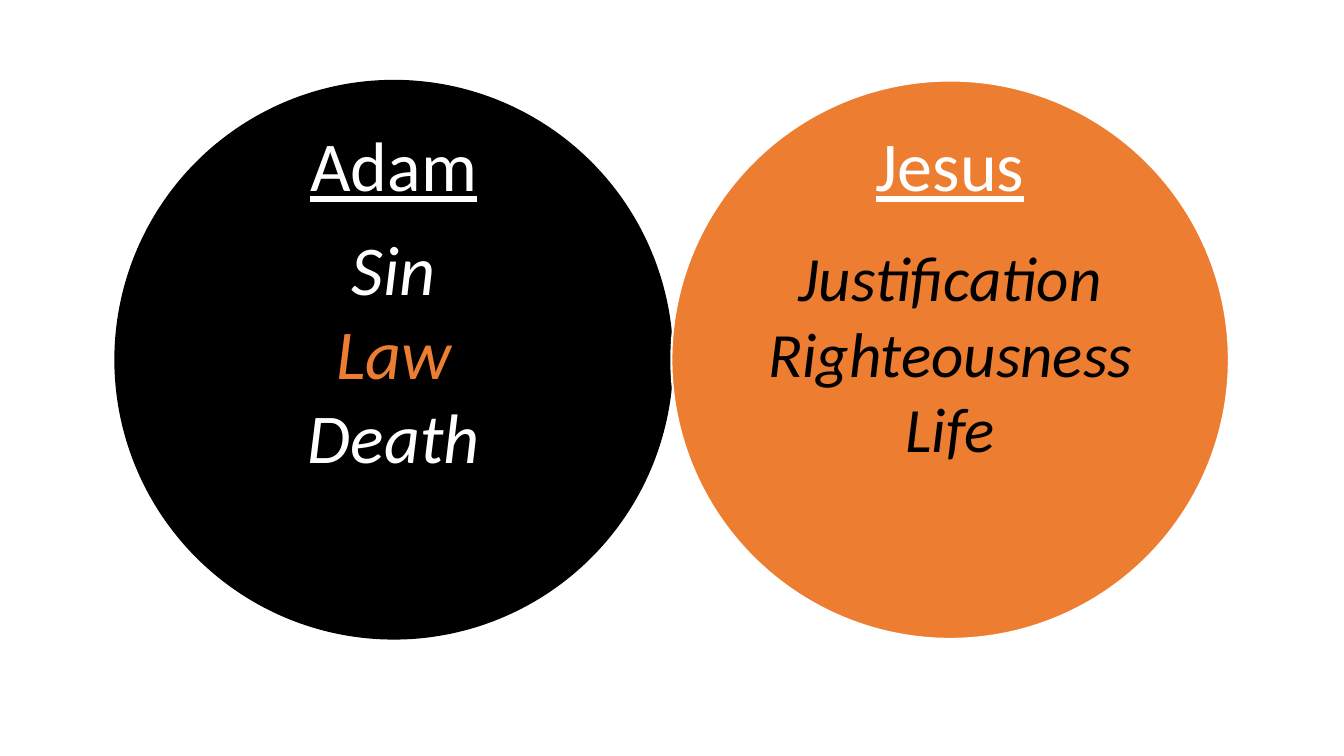
from pptx import Presentation
from pptx.dml.color import RGBColor
from pptx.enum.shapes import MSO_SHAPE
from pptx.enum.text import MSO_AUTO_SIZE, PP_ALIGN
from pptx.util import Cm, Pt

OVAL = MSO_SHAPE.OVAL
CENTER = PP_ALIGN.CENTER
GROW = MSO_AUTO_SIZE.SHAPE_TO_FIT_TEXT
FONT = "Calibri"
COLORS = {"black": "000000", "white": "FFFFFF", "orange": "ED7D31"}

# Content: each circle with its title and words
CIRCLES = [
    {"fill": "black", "edge": "black", "line": 1, "title": "Adam",
     "words": [("Sin", "white"), ("Law", "orange"), ("Death", "white")],
     "size": 50, "top": 5.56, "width": 7.04, "height": 6.68},
    {"fill": "orange", "edge": "white", "line": 1.5, "title": "Jesus",
     "words": [("Justification", "black"), ("Righteousness", "black"),
               ("Life", "black")],
     "size": 45, "top": 5.89, "width": 10.52, "height": 6.02},
]

# Layout in cm
LEFT, TOP, STEP = 2.9, 2.03, 14.02
WIDE, HIGH = 14.05, 14.07
HEAD = {"top": 2.95, "width": 7.04, "height": 2.39, "size": 50}


def color(name):
    return RGBColor.from_string(COLORS[name])


def add_text(slide, mid, box, lines, under=None, italic=None):
    shape = slide.shapes.add_textbox(
        Cm(mid - box["width"] / 2), Cm(box["top"]),
        Cm(box["width"]), Cm(box["height"]))
    frame = shape.text_frame
    frame.word_wrap = True
    frame.auto_size = GROW
    for i, (text, tint) in enumerate(lines):
        para = frame.add_paragraph() if i else frame.paragraphs[0]
        para.alignment = CENTER
        run = para.add_run()
        run.text = text
        font = run.font
        font.name, font.size = FONT, Pt(box["size"])
        font.underline, font.italic = under, italic
        font.color.rgb = color(tint)


def main():
    deck = Presentation()
    deck.slide_width, deck.slide_height = Cm(33.87), Cm(19.05)
    slide = deck.slides.add_slide(deck.slide_layouts[6])

    # Circles side by side
    for i, item in enumerate(CIRCLES):
        disc = slide.shapes.add_shape(
            OVAL, Cm(LEFT + i * STEP), Cm(TOP), Cm(WIDE), Cm(HIGH))
        disc.shadow.inherit = False
        disc.fill.solid()
        disc.fill.fore_color.rgb = color(item["fill"])
        disc.line.color.rgb = color(item["edge"])
        disc.line.width = Pt(item["line"])

    # Titles and words, centred on each circle
    for i, item in enumerate(CIRCLES):
        mid = LEFT + i * STEP + WIDE / 2
        add_text(slide, mid, HEAD, [(item["title"], "white")], under=True)
        add_text(slide, mid, item, item["words"], italic=True)

    deck.save("out.pptx")


if __name__ == "__main__":
    main()
